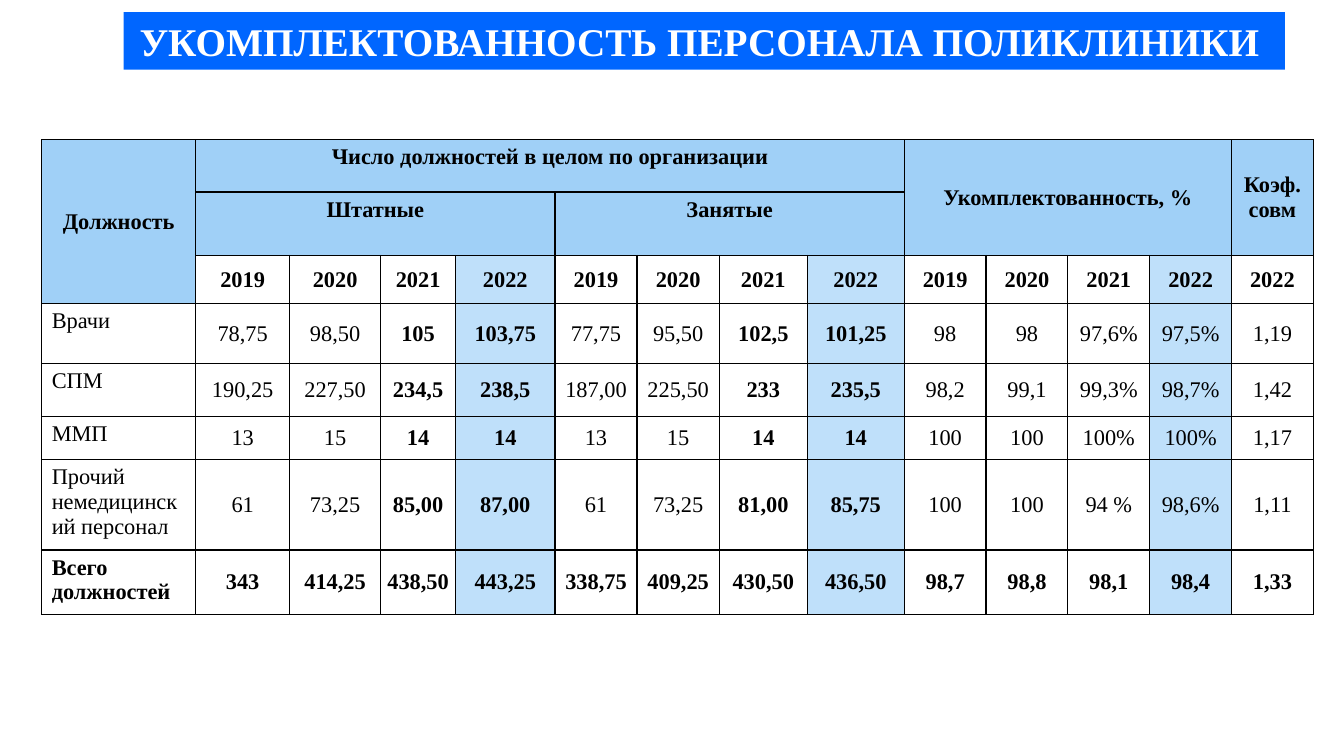
from pptx import Presentation
from pptx import util as u
from pptx.dml.color import RGBColor
from pptx.enum import text
from pptx.oxml import parse_xml
from pptx.oxml.ns import nsdecls

COLORS = {"title": "0066FF", "header": "A0D0F7", "current": "BFE0FA",
          "white": "FFFFFF", "black": "000000"}
COLUMN_WIDTHS = [11.46, 6.99, 6.77, 5.58, 7.4, 6.1, 6.13, 6.54, 7.22] + [6.09] * 5
ROW_HEIGHTS = [6.9, 8.4, 6.4, 7.85, 7, 5.77, 11.95, 8.5]
YEARS = ["2019", "2020", "2021", "2022"]
HEADERS = [
    (0, 0, 3, 1, "Должность", "MIDDLE"),
    (0, 1, 1, 8, "Число должностей в целом по организации", "TOP"),
    (0, 9, 2, 4, "Укомплектованность, %", "MIDDLE"),
    (0, 13, 2, 1, "Коэф. совм", "MIDDLE"),
    (1, 1, 1, 4, "Штатные", "TOP"),
    (1, 5, 1, 4, "Занятые", "TOP"),
]
STAFF = [
    ["Врачи", "78,75", "98,50", "105", "103,75", "77,75", "95,50", "102,5",
     "101,25", "98", "98", "97,6%", "97,5%", "1,19"],
    ["СПМ", "190,25", "227,50", "234,5", "238,5", "187,00", "225,50", "233",
     "235,5", "98,2", "99,1", "99,3%", "98,7%", "1,42"],
    ["ММП", "13", "15", "14", "14", "13", "15", "14",
     "14", "100", "100", "100%", "100%", "1,17"],
    ["Прочий немедицинский персонал", "61", "73,25", "85,00", "87,00", "61", "73,25",
     "81,00", "85,75", "100", "100", "94 %", "98,6%", "1,11"],
    ["Всего должностей", "343", "414,25", "438,50", "443,25", "338,75", "409,25",
     "430,50", "436,50", "98,7", "98,8", "98,1", "98,4", "1,33"],
]
CURRENT_YEAR_COLUMNS = (4, 8, 12)
BOLD_COLUMNS = (3, 4, 7, 8)


class Deck:
    font = "Times New Roman"

    def __init__(self):
        self.prs = Presentation()
        self.prs.slide_width, self.prs.slide_height = u.Inches(13.33), u.Inches(7.5)
        self.s = self.prs.slides.add_slide(self.prs.slide_layouts[5])

    def x(self, percent):
        return round(self.prs.slide_width * percent / 100)

    def y(self, percent):
        return round(self.prs.slide_height * percent / 100)

    def fill(self, target, color):
        target.fill.solid()
        target.fill.fore_color.rgb = RGBColor.from_string(COLORS[color])

    def put_text(self, tf, words, size, color, bold, align="CENTER"):
        p = tf.paragraphs[0]
        p.alignment = text.PP_ALIGN[align]
        r = p.add_run()
        r.text = words
        for name, value in {"name": self.font, "size": u.Pt(size), "bold": bold}.items():
            setattr(r.font, name, value)
        r.font.color.rgb = RGBColor.from_string(COLORS[color])

    def title(self, words, left, top, width, height):
        sp = self.s.shapes.title
        box = {"left": self.x(left), "top": self.y(top),
               "width": self.x(width), "height": self.y(height)}
        for name, value in box.items():
            setattr(sp, name, value)
        self.fill(sp, "title")
        tf = sp.text_frame
        tf.word_wrap = False
        tf.auto_size = text.MSO_AUTO_SIZE.NONE
        tf.vertical_anchor = text.MSO_ANCHOR.MIDDLE
        self.put_text(tf, words, 28, "white", True)

    def table(self, left, top, widths, heights):
        frame = self.s.shapes.add_table(len(heights), len(widths), self.x(left), self.y(top),
                                        self.x(sum(widths)), self.y(sum(heights)))
        table = frame.table
        table.first_row = table.horz_banding = False
        for column, width in zip(table.columns, widths):
            column.width = self.x(width)
        for row, height in zip(table.rows, heights):
            row.height = self.y(height)
        for cell in table.iter_cells():
            self.borders(cell)
        return table

    def borders(self, cell):
        for side in ("lnL", "lnR", "lnT", "lnB"):
            cell._tc.get_or_add_tcPr().append(parse_xml(
                f'<a:{side} {nsdecls("a")} w="12700"><a:solidFill>'
                f'<a:srgbClr val="{COLORS["black"]}"/></a:solidFill></a:{side}>'))

    def cell(self, cell, words, color, bold, align="CENTER", anchor="MIDDLE"):
        self.fill(cell, color)
        cell.vertical_anchor = text.MSO_ANCHOR[anchor]
        if align == "CENTER":
            cell.margin_left = cell.margin_right = u.Inches(0.01)
        self.put_text(cell.text_frame, words, 16, "black", bold, align)


def main():
    deck = Deck()
    deck.title("УКОМПЛЕКТОВАННОСТЬ ПЕРСОНАЛА ПОЛИКЛИНИКИ ", 9.2, 1.6, 86.4, 7.6)
    table = deck.table(3.1, 18.5, COLUMN_WIDTHS, ROW_HEIGHTS)
    for row, col, rows, cols, words, anchor in HEADERS:
        start = table.cell(row, col)
        start.merge(table.cell(row + rows - 1, col + cols - 1))
        deck.cell(start, words, "header", True, anchor=anchor)
    for col, year in enumerate(YEARS * 3 + YEARS[-1:], 1):
        color = "current" if col in CURRENT_YEAR_COLUMNS else "white"
        deck.cell(table.cell(2, col), year, color, True)
    for row, values in enumerate(STAFF, 3):
        total = values is STAFF[-1]
        for col, words in enumerate(values):
            color = "current" if col in CURRENT_YEAR_COLUMNS else "white"
            align, anchor = ("CENTER", "MIDDLE") if col else ("LEFT", "TOP")
            deck.cell(table.cell(row, col), words, color,
                      total or col in BOLD_COLUMNS, align, anchor)
    deck.prs.save("out.pptx")


if __name__ == "__main__":
    main()
